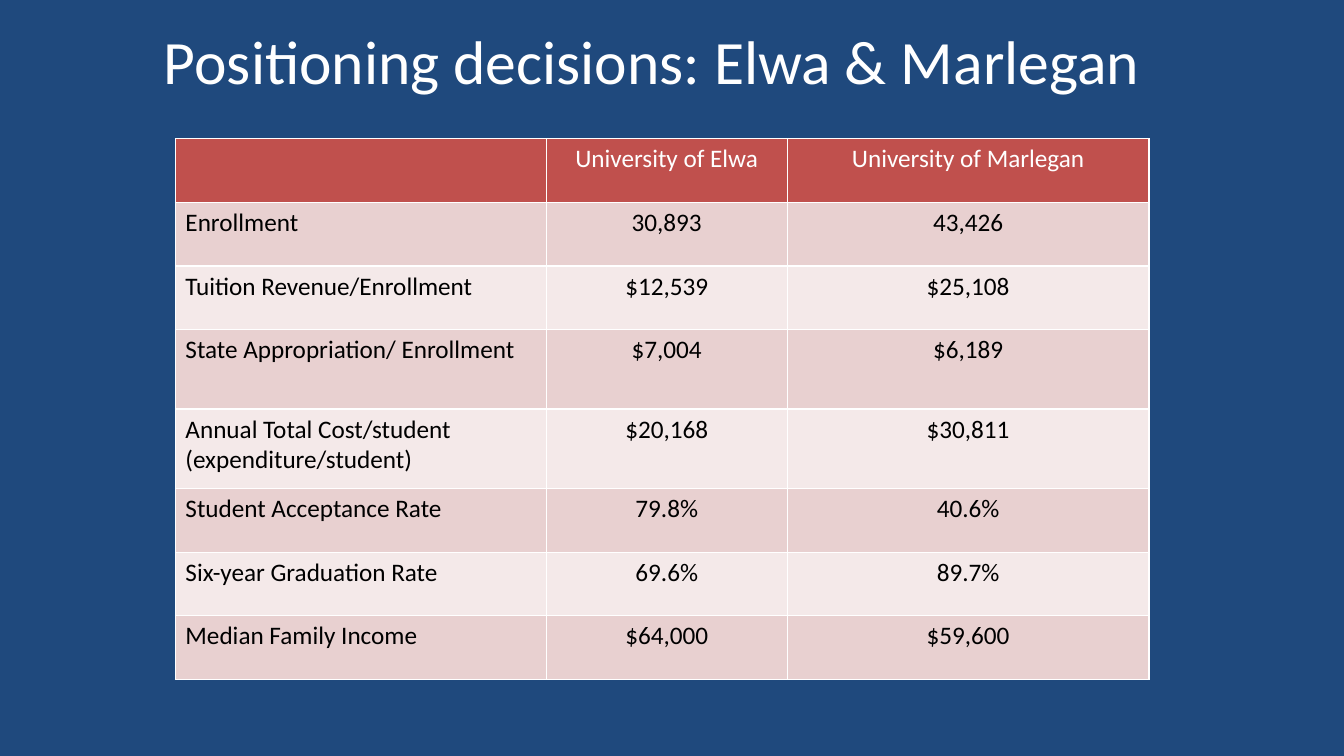
from lxml import etree
from pptx import Presentation
from pptx import util as u
from pptx.dml.color import RGBColor
from pptx.enum import text
from pptx.oxml.ns import qn

NAVY = RGBColor(0x1F, 0x49, 0x7D)
WHITE = RGBColor(0xFF, 0xFF, 0xFF)
BLACK = RGBColor(0x00, 0x00, 0x00)
RED = RGBColor(0xC0, 0x50, 0x4D)
BANDS = (RGBColor(0xF4, 0xE9, 0xE9), RGBColor(0xE8, 0xD0, 0xD0))
FONT = "Calibri"

ROWS = [
    ("", "University of Elwa", "University of Marlegan"),
    ("Enrollment", "30,893", "43,426"),
    ("Tuition Revenue/Enrollment", "$12,539", "$25,108"),
    ("State Appropriation/ Enrollment", "$7,004", "$6,189"),
    ("Annual Total Cost/student (expenditure/student)", "$20,168", "$30,811"),
    ("Student Acceptance Rate", "79.8%", "40.6%"),
    ("Six-year Graduation Rate", "69.6%", "89.7%"),
    ("Median Family Income", "$64,000", "$59,600"),
]
COL_WEIGHTS = (3.68, 2.39, 3.59)
TALL_ROWS = (3, 4)
TALL = 1.25  # height of a tall row relative to a normal one


def style_paragraph(p, size, color, align):
    p.alignment = align
    p.font.name = FONT
    p.font.size = u.Pt(size)
    p.font.bold = False
    p.font.color.rgb = color


def set_borders(cell):
    tcPr = cell._tc.get_or_add_tcPr()
    for side in "LRTB":
        ln = etree.SubElement(tcPr, qn(f"a:ln{side}"), w=str(u.Pt(1)))
        fill = etree.SubElement(ln, qn("a:solidFill"))
        etree.SubElement(fill, qn("a:srgbClr"), val=str(WHITE))


def add_title(s, left, top, width, height):
    sp = s.shapes.title
    sp.left, sp.top, sp.width, sp.height = left, top, width, height
    tf = sp.text_frame
    tf.text = "Positioning decisions: Elwa & Marlegan"
    tf.vertical_anchor = text.MSO_ANCHOR.MIDDLE
    style_paragraph(tf.paragraphs[0], 44, WHITE, text.PP_ALIGN.CENTER)


def add_comparison(s, left, top, width, height):
    table = s.shapes.add_table(len(ROWS), len(COL_WEIGHTS),
                               left, top, width, height).table
    for col, weight in zip(table.columns, COL_WEIGHTS):
        col.width = int(width * weight / sum(COL_WEIGHTS))

    # Row heights share the box, with the tall rows weighted
    weights = [TALL if i in TALL_ROWS else 1 for i in range(len(ROWS))]
    for row, weight in zip(table.rows, weights):
        row.height = int(height * weight / sum(weights))

    # Red header, then alternating pink bands
    for i, values in enumerate(ROWS):
        header = i == 0
        for j, value in enumerate(values):
            cell = table.cell(i, j)
            cell.text = value
            set_borders(cell)
            cell.fill.solid()
            cell.fill.fore_color.rgb = RED if header else BANDS[i % 2]
            align = text.PP_ALIGN.CENTER if j else text.PP_ALIGN.LEFT
            style_paragraph(cell.text_frame.paragraphs[0], 18,
                            WHITE if header else BLACK, align)


def main():
    prs = Presentation()
    prs.slide_width, prs.slide_height = u.Cm(33.87), u.Cm(19.05)
    s = prs.slides.add_slide(prs.slide_layouts[5])  # title only
    s.background.fill.solid()
    s.background.fill.fore_color.rgb = NAVY
    add_title(s, u.Cm(3.71), u.Cm(0.64), u.Cm(25.45), u.Cm(1.73))
    add_comparison(s, u.Cm(4.42), u.Cm(3.5), u.Cm(24.54), u.Cm(13.62))
    prs.save("out.pptx")


if __name__ == "__main__":
    main()
